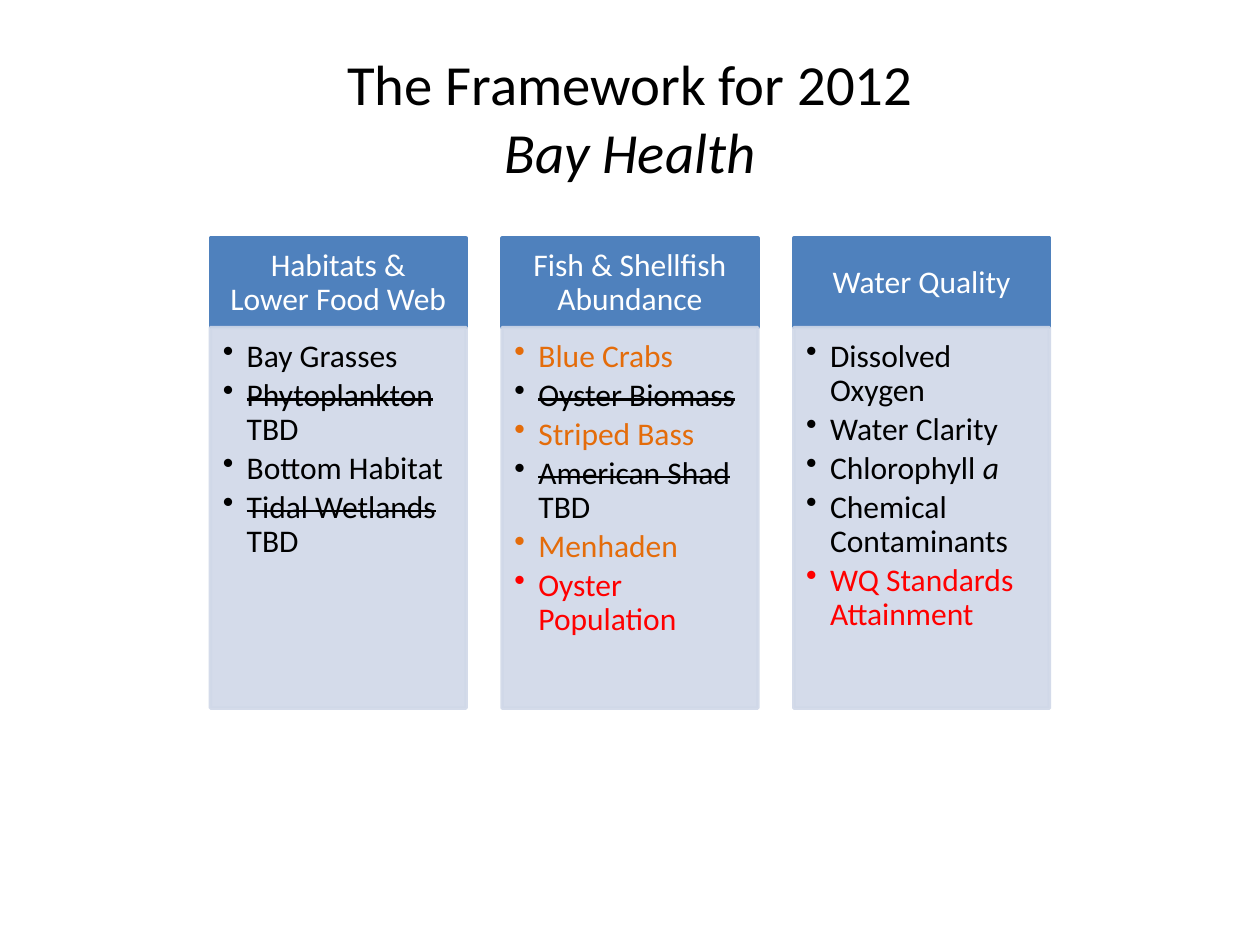
"""Build the 2012 Bay Health framework slide."""
import lxml.etree
import pptx
import pptx.dml.color
import pptx.enum.shapes
import pptx.enum.text
import pptx.oxml.ns
import pptx.util

Inches = pptx.util.Inches
Pt = pptx.util.Pt

TITLE = ("The Framework for 2012", "Bay Health")
COLUMNS = [
    ("Habitats &\vLower Food Web", [
        [("Bay Grasses", "plain")],
        [("Phytoplankton ", "dropped"), ("TBD", "plain")],
        [("Bottom Habitat", "plain")],
        [("Tidal Wetlands ", "dropped"), ("TBD", "plain")],
    ]),
    ("Fish & Shellfish Abundance", [
        [("Blue Crabs", "pending")],
        [("Oyster Biomass", "dropped")],
        [("Striped Bass", "pending")],
        [("American Shad ", "dropped"), ("TBD", "plain")],
        [("Menhaden", "pending")],
        [("Oyster Population", "added")],
    ]),
    ("Water Quality", [
        [("Dissolved Oxygen", "plain")],
        [("Water Clarity", "plain")],
        [("Chlorophyll ", "plain"), ("a", "italic")],
        [("Chemical Contaminants", "plain")],
        [("WQ Standards Attainment", "added")],
    ]),
]
THEME = {
    "font": "Calibri", "title_size": 32.4, "text_size": 18,
    "header": "4F81BD", "panel": "D0D8E8", "header_text": "FFFFFF",
    "plain": "000000", "dropped": "000000", "italic": "000000",
    "pending": "E46C0A", "added": "FF0000",
}
LEFT, TOP, WIDTH, PITCH = 1.67, 1.89, 2.03, 2.315
HEADER_HEIGHT, PANEL_HEIGHT = 0.71, 3.02


def color(name):
    return pptx.dml.color.RGBColor.from_string(THEME[name])


def format_run(run, style, size="text_size"):
    run.font.name = THEME["font"]
    run.font.size = Pt(THEME[size])
    run.font.color.rgb = color(style)
    if style == "italic":
        run.font.italic = True
    if style == "dropped":
        run.font._element.set("strike", "sngStrike")


def add_box(slide, left, top, height, fill, insets, anchor):
    shape = slide.shapes.add_shape(
        pptx.enum.shapes.MSO_SHAPE.RECTANGLE,
        Inches(left), Inches(top), Inches(WIDTH), Inches(height))
    shape.shadow.inherit = False
    shape.fill.solid()
    shape.fill.fore_color.rgb = color(fill)
    shape.line.color.rgb = color(fill)
    shape.line.width = Pt(2)
    frame = shape.text_frame
    frame.word_wrap = True
    frame.vertical_anchor = anchor
    (frame.margin_left, frame.margin_top,
     frame.margin_right, frame.margin_bottom) = map(Inches, insets)
    return shape


def add_header(slide, left, text):
    shape = add_box(slide, left, TOP, HEADER_HEIGHT, "header",
                    (0.14, 0.08, 0.14, 0.08), pptx.enum.text.MSO_ANCHOR.MIDDLE)
    shape.text_frame.text = text
    paragraph = shape.text_frame.paragraphs[0]
    paragraph.alignment = pptx.enum.text.PP_ALIGN.CENTER
    paragraph.line_spacing = 0.9
    for run in paragraph.runs:
        format_run(run, "header_text")


def format_bullet(paragraph):
    paragraph.level = 1
    paragraph.alignment = pptx.enum.text.PP_ALIGN.LEFT
    paragraph.line_spacing = 0.9
    paragraph.space_after = Pt(2.8)
    properties = paragraph._p.get_or_add_pPr()
    properties.set("marL", str(Inches(0.19)))
    properties.set("indent", str(-Inches(0.19)))
    bullet = lxml.etree.SubElement(properties, pptx.oxml.ns.qn("a:buChar"))
    bullet.set("char", "•")


def add_panel(slide, left, items):
    shape = add_box(slide, left, TOP + HEADER_HEIGHT, PANEL_HEIGHT, "panel",
                    (0.1, 0.1, 0.14, 0.16), pptx.enum.text.MSO_ANCHOR.TOP)
    for fill_color in shape._element.spPr.iter(pptx.oxml.ns.qn("a:srgbClr")):
        alpha = lxml.etree.SubElement(fill_color, pptx.oxml.ns.qn("a:alpha"))
        alpha.set("val", "90000")
    frame = shape.text_frame
    for index, item in enumerate(items):
        paragraph = frame.add_paragraph() if index else frame.paragraphs[0]
        format_bullet(paragraph)
        for text, style in item:
            run = paragraph.add_run()
            run.text = text
            format_run(run, style)


def add_title(slide):
    title = slide.shapes.title
    title.left, title.top, title.width, title.height = map(
        Inches, (0.5, 0.3, 9, 1.25))
    frame = title.text_frame
    frame.text = "\v".join(TITLE)
    frame.auto_size = pptx.enum.text.MSO_AUTO_SIZE.NONE
    frame.vertical_anchor = pptx.enum.text.MSO_ANCHOR.MIDDLE
    paragraph = frame.paragraphs[0]
    paragraph.alignment = pptx.enum.text.PP_ALIGN.CENTER
    for run, style in zip(paragraph.runs, ("plain", "italic")):
        format_run(run, style, "title_size")


def main():
    presentation = pptx.Presentation()
    presentation.slide_width = Inches(10)
    presentation.slide_height = Inches(7.5)
    slide = presentation.slides.add_slide(presentation.slide_layouts[5])
    add_title(slide)
    for index, (header, items) in enumerate(COLUMNS):
        left = LEFT + index * PITCH
        add_header(slide, left, header)
        add_panel(slide, left, items)
    presentation.save("out.pptx")


if __name__ == "__main__":
    main()
